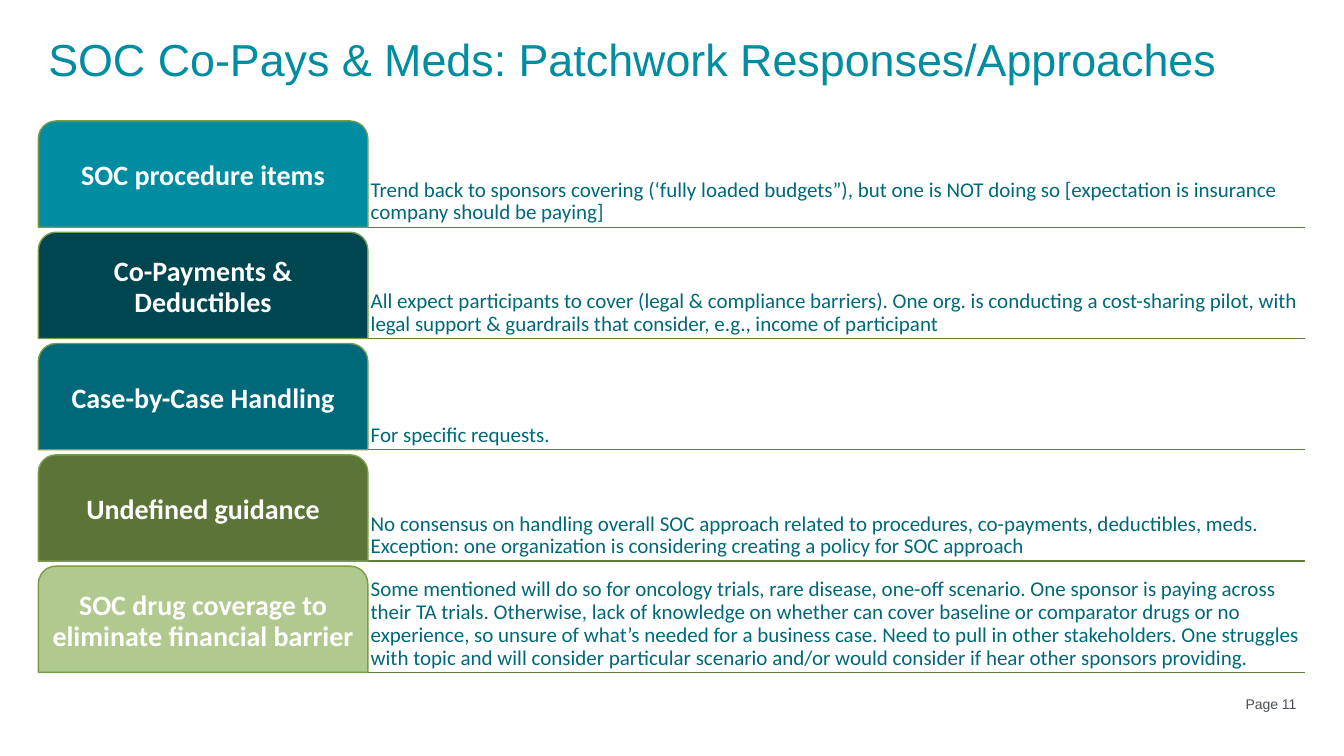
from pptx import Presentation
from pptx.dml.color import RGBColor
from pptx.enum.shapes import MSO_CONNECTOR as Connector, MSO_SHAPE as Shape
from pptx.enum.text import MSO_ANCHOR as Anchor, PP_ALIGN as Align
from pptx.oxml.xmlchemy import OxmlElement
from pptx.util import Pt

TEAL, DEEP_TEAL, WHITE = "008CA1", "006979", "FFFFFF"
LEFT, RIGHT = 27.4, 932.4
FIRST_TOP, ROW_HEIGHT, ROW_PITCH = 86.4, 75.9, 79.5
LABEL_WIDTH = 235.4

APPROACHES = [
    ("SOC procedure items", TEAL,
     "Trend back to sponsors covering (‘fully loaded budgets”), but one is NOT doing so "
     "[expectation is insurance company should be paying]"),
    ("Co-Payments & Deductibles", "004650",
     "All expect participants to cover (legal & compliance barriers). One org. is conducting "
     "a cost-sharing pilot, with legal support & guardrails that consider, e.g., income of "
     "participant"),
    ("Case-by-Case Handling", DEEP_TEAL, "For specific requests."),
    ("Undefined guidance", "5B7538",
     "No consensus on handling overall SOC approach related to procedures, co-payments, "
     "deductibles, meds. Exception: one organization is considering creating a policy for "
     "SOC approach"),
    ("SOC drug coverage to eliminate financial barrier", "AFC98E",
     "Some mentioned will do so for oncology trials, rare disease, one-off scenario. One "
     "sponsor is paying across their TA trials. Otherwise, lack of knowledge on whether can "
     "cover baseline or comparator drugs or no experience, so unsure of what’s needed for a "
     "business case. Need to pull in other stakeholders. One struggles with topic and will "
     "consider particular scenario and/or would consider if hear other sponsors providing."),
]


def color(value):
    return RGBColor.from_string(value)


class SlideBuilder:
    """Holds the current slide and the styling shared by its elements."""

    def __init__(self, slide):
        self.shapes = slide.shapes

    def fill_text(self, shape, text, size, ink, font="Calibri", bold=False, align=Align.LEFT,
                  anchor=Anchor.MIDDLE, insets=(3, 3), spacing=0.9):
        """Fill a shape with one paragraph; insets are (sides, top and bottom)."""
        frame = shape.text_frame
        frame.word_wrap = True
        frame.vertical_anchor = anchor
        frame.margin_left = frame.margin_right = Pt(insets[0])
        frame.margin_top = frame.margin_bottom = Pt(insets[1])
        paragraph = frame.paragraphs[0]
        paragraph.alignment = align
        paragraph.line_spacing = spacing
        run = paragraph.add_run()
        run.text = text
        run.font.name, run.font.size, run.font.bold = font, Pt(size), bold
        run.font.color.rgb = color(ink)

    def text(self, left, top, width, height, text, size, ink, **style):
        box = self.shapes.add_textbox(Pt(left), Pt(top), Pt(width), Pt(height))
        self.fill_text(box, text, size, ink, **style)

    def label(self, top, text, fill):
        tab = self.shapes.add_shape(Shape.ROUND_2_SAME_RECTANGLE, Pt(LEFT), Pt(top),
                                    Pt(LABEL_WIDTH), Pt(ROW_HEIGHT))
        tab.shadow.inherit = False
        tab.fill.solid()
        tab.fill.fore_color.rgb = color(fill)
        tab.line.color.rgb = color("799C4B")
        tab.line.width = Pt(1)
        self.fill_text(tab, text, 20, WHITE, bold=True, align=Align.CENTER)

    def rule(self, y):
        line = self.shapes.add_connector(Connector.STRAIGHT, Pt(LEFT), Pt(y), Pt(RIGHT), Pt(y))
        line.line.color.rgb = color("617D3C")
        line.line.width = Pt(1)
        line._element.spPr.append(OxmlElement("a:effectLst"))


def main():
    deck = Presentation()
    deck.slide_width, deck.slide_height = Pt(960), Pt(540)
    builder = SlideBuilder(deck.slides.add_slide(deck.slide_layouts[6]))

    builder.text(631.4, 493.2, 301.7, 19.4, "Page 11", 10, "4B4F55", font="Arial",
                 align=Align.RIGHT, anchor=Anchor.TOP, insets=(7.2, 3.6), spacing=1)
    builder.text(LEFT, 23, RIGHT - LEFT, 67, "SOC Co-Pays & Meds: Patchwork Responses/Approaches",
                 32, TEAL, font="Arial", anchor=Anchor.TOP, insets=(7.2, 0), spacing=1)

    detail_left = LEFT + LABEL_WIDTH
    for row, (name, fill, detail) in enumerate(APPROACHES):
        top = FIRST_TOP + row * ROW_PITCH
        builder.rule(top + ROW_HEIGHT)
        builder.text(detail_left, top, RIGHT - detail_left, ROW_HEIGHT, detail, 15, DEEP_TEAL,
                     anchor=Anchor.BOTTOM, insets=(2, 2))
        builder.label(top, name, fill)

    deck.save("out.pptx")


if __name__ == "__main__":
    main()
